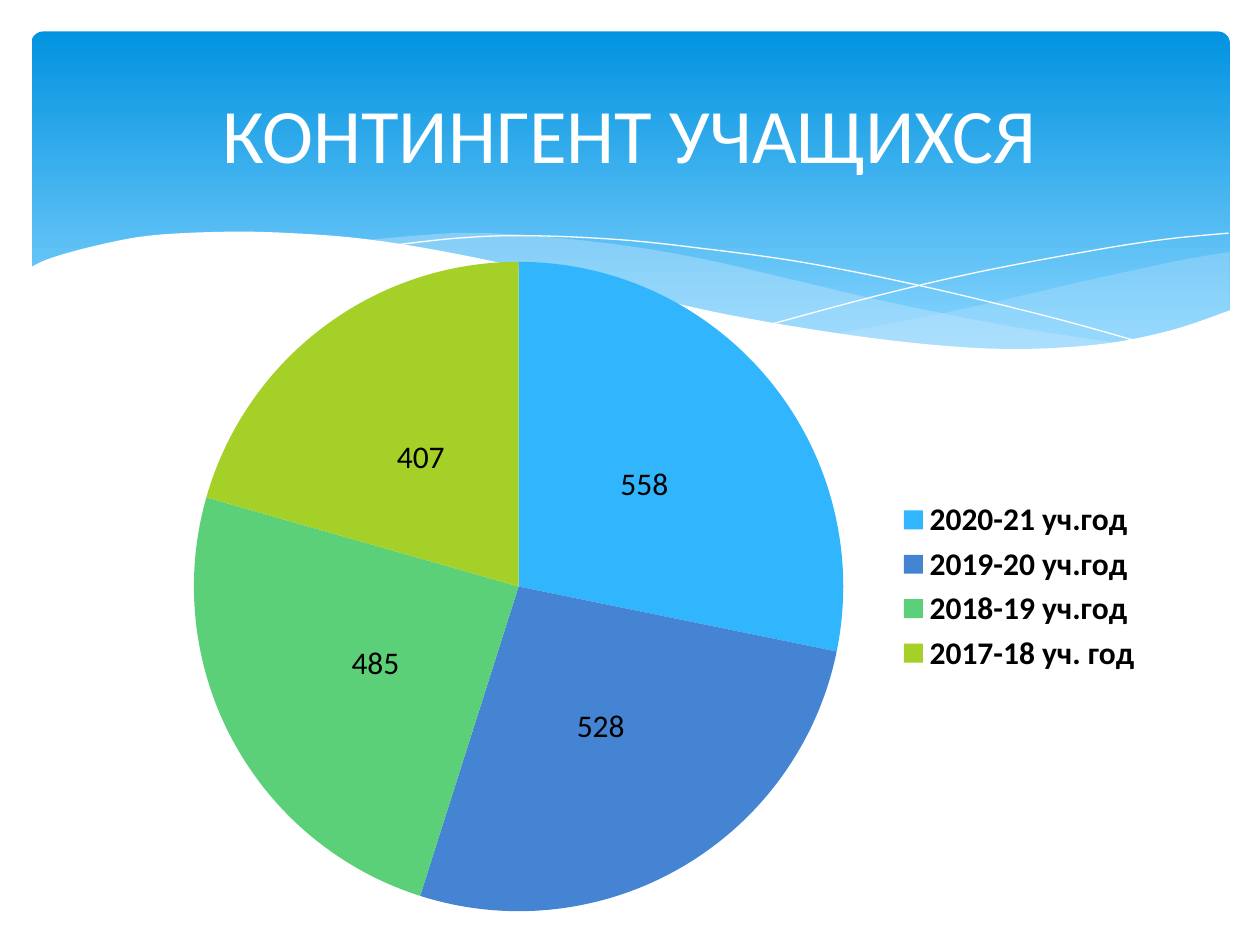
from lxml.etree import SubElement
from pptx import Presentation
from pptx.chart.data import CategoryChartData
from pptx.dml.color import RGBColor
from pptx.enum.chart import XL_CHART_TYPE, XL_LABEL_POSITION, XL_LEGEND_POSITION
from pptx.enum.shapes import MSO_SHAPE
from pptx.enum.text import MSO_ANCHOR, PP_ALIGN
from pptx.oxml.ns import qn
from pptx.util import Inches, Pt

FONT = "Calibri"
COLORS = {
    "top": "0293E0",
    "base": "83D3FE",
    "mist": "C6E7FC",
    "white": "FFFFFF",
    "black": "000000",
}
YEARS = [
    ("2020-21 уч.год", 558, "31B6FD"),
    ("2019-20 уч.год", 528, "4584D3"),
    ("2018-19 уч.год", 485, "5BD078"),
    ("2017-18 уч. год", 407, "A5D028"),
]

RIGHT_TOP = [(9.53, 0.16), (9.12, 0.23), (8.38, 0.39), (7.56, 0.58), (6.83, 0.73), (6.38, 0.81)]
RIGHT_BASE = [(6.38, 0.81), (6.96, 0.88), (7.46, 0.93), (7.91, 0.94), (8.4, 0.91),
              (8.9, 0.83), (9.26, 0.73), (9.53, 0.63)]
LONG_TOP = [(8.7, 0.89), (7.84, 0.76), (6.83, 0.56), (6.06, 0.38), (5.32, 0.21),
            (4.66, 0.1), (3.97, 0.03), (3.38, 0.01), (2.63, 0.07)]
LONG_BASE = [(2.63, 0.07), (3.39, 0.19), (4.26, 0.38), (5.07, 0.56), (5.95, 0.74),
             (6.72, 0.86), (7.38, 0.93), (7.95, 0.94), (8.34, 0.93), (8.7, 0.89)]
FALL = [(2.86, 0.11), (3.4, 0.05), (3.93, 0.03), (4.66, 0.06), (5.33, 0.13),
        (6.13, 0.24), (7.04, 0.42), (8.08, 0.67), (8.84, 0.88)]
RISE = [(5.9, 0.73), (6.72, 0.51), (7.53, 0.32), (8.43, 0.15), (9.01, 0.06), (9.52, 0.01)]
CREST = [(9.54, 0.62), (9.07, 0.78), (8.52, 0.89), (7.86, 0.93), (7.21, 0.9), (6.45, 0.81),
         (5.56, 0.66), (4.8, 0.49), (4.24, 0.36), (3.42, 0.18), (2.69, 0.06), (2.07, 0.01),
         (1.54, 0), (0.96, 0.03), (0.53, 0.11), (0.17, 0.21), (0, 0.29)]
FLOOR = [(0, 1.45), (9.54, 1.45)]


def color(name):
    return RGBColor.from_string(COLORS.get(name, name))


def style(font, size, name, bold=False):
    font.name = FONT
    font.size = Pt(size)
    font.bold = bold
    font.color.rgb = color(name)


def smooth(knots, steps=6):
    ends = [knots[0], *knots, knots[-1]]
    points = [knots[0]]
    for a, b, c, d in zip(ends, ends[1:], ends[2:], ends[3:]):
        for step in range(1, steps + 1):
            t = step / steps
            points.append(tuple(
                q + t * (r - p) / 2 + t**2 * (2 * p - 5 * q + 4 * r - s) / 2
                + t**3 * (3 * q - p - 3 * r + s) / 2
                for p, q, r, s in zip(a, b, c, d)))
    return points


def draw(slide, box, points, closed):
    spots = [(Inches(box[0] + x), Inches(box[1] + y)) for x, y in points]
    maker = slide.shapes.build_freeform(*spots[0])
    maker.add_line_segments(spots[1:], close=closed)
    shape = maker.convert_to_shape()
    shape.shadow.inherit = False
    return shape


def area(slide, box, points, name, alpha=100):
    shape = draw(slide, box, points, True)
    shape.fill.solid()
    shape.fill.fore_color.rgb = color(name)
    shape.line.fill.background()
    if alpha < 100:
        tint = shape.fill._xPr.find(".//" + qn("a:srgbClr"))
        SubElement(tint, qn("a:alpha"), val=str(alpha * 1000))


def strand(slide, box, knots):
    shape = draw(slide, box, smooth(knots), False)
    shape.fill.background()
    shape.line.color.rgb = color("white")
    shape.line.width = Pt(0)


def add_banner(slide, box):
    shape = slide.shapes.add_shape(MSO_SHAPE.ROUNDED_RECTANGLE, *map(Inches, box))
    shape.adjustments[0] = 0.034
    shape.shadow.inherit = False
    shape.line.fill.background()
    shape.fill.gradient()
    shape.fill.gradient_angle = 270
    for stop, name, place in zip(shape.fill.gradient_stops, ("top", "base"), (0, 0.9)):
        stop.color.rgb = color(name)
        stop.position = place


def add_waves(slide, box):
    area(slide, box, smooth(RIGHT_TOP) + smooth(RIGHT_BASE), "mist", 29)
    area(slide, box, smooth(LONG_TOP) + smooth(LONG_BASE), "mist", 40)
    strand(slide, box, FALL)
    strand(slide, box, RISE)
    area(slide, box, smooth(CREST) + FLOOR, "white")


def add_title(slide, box, text):
    frame = slide.shapes.add_textbox(*map(Inches, box)).text_frame
    frame.word_wrap = True
    frame.vertical_anchor = MSO_ANCHOR.MIDDLE
    frame.text = text
    line = frame.paragraphs[0]
    line.alignment = PP_ALIGN.CENTER
    style(line.runs[0].font, 44, "white")


def add_pie(slide, box):
    data = CategoryChartData()
    data.categories = [year for year, _, _ in YEARS]
    data.add_series("Series 1", [count for _, count, _ in YEARS])
    chart = slide.shapes.add_chart(XL_CHART_TYPE.PIE, *map(Inches, box), data).chart
    style(chart.font, 18, "black")
    chart.has_title = False
    chart.has_legend = True
    chart.legend.position = XL_LEGEND_POSITION.RIGHT
    chart.legend.include_in_layout = False
    style(chart.legend.font, 18, "black", True)
    plot = chart.plots[0]
    plot.vary_by_categories = True
    for index, (_, _, shade) in enumerate(YEARS):
        fill = plot.series[0].points[index].format.fill
        fill.solid()
        fill.fore_color.rgb = color(shade)
    plot.has_data_labels = True
    labels = plot.data_labels
    labels.show_value = True
    labels.show_percentage = False
    labels.position = XL_LABEL_POSITION.CENTER
    style(labels.font, 18, "black")


def main():
    deck = Presentation()
    deck.slide_width, deck.slide_height = Inches(10), Inches(7.5)
    slide = deck.slides.add_slide(deck.slide_layouts[6])
    add_banner(slide, (0.25, 0.25, 9.51, 2.7))
    add_waves(slide, (0.23, 1.84, 9.54, 1.45))
    add_title(slide, (0.5, 0.37, 9, 1.37), "КОНТИНГЕНТ УЧАЩИХСЯ")
    add_pie(slide, (1.14, 1.94, 8.03, 5.43))
    deck.save("out.pptx")


if __name__ == "__main__":
    main()
